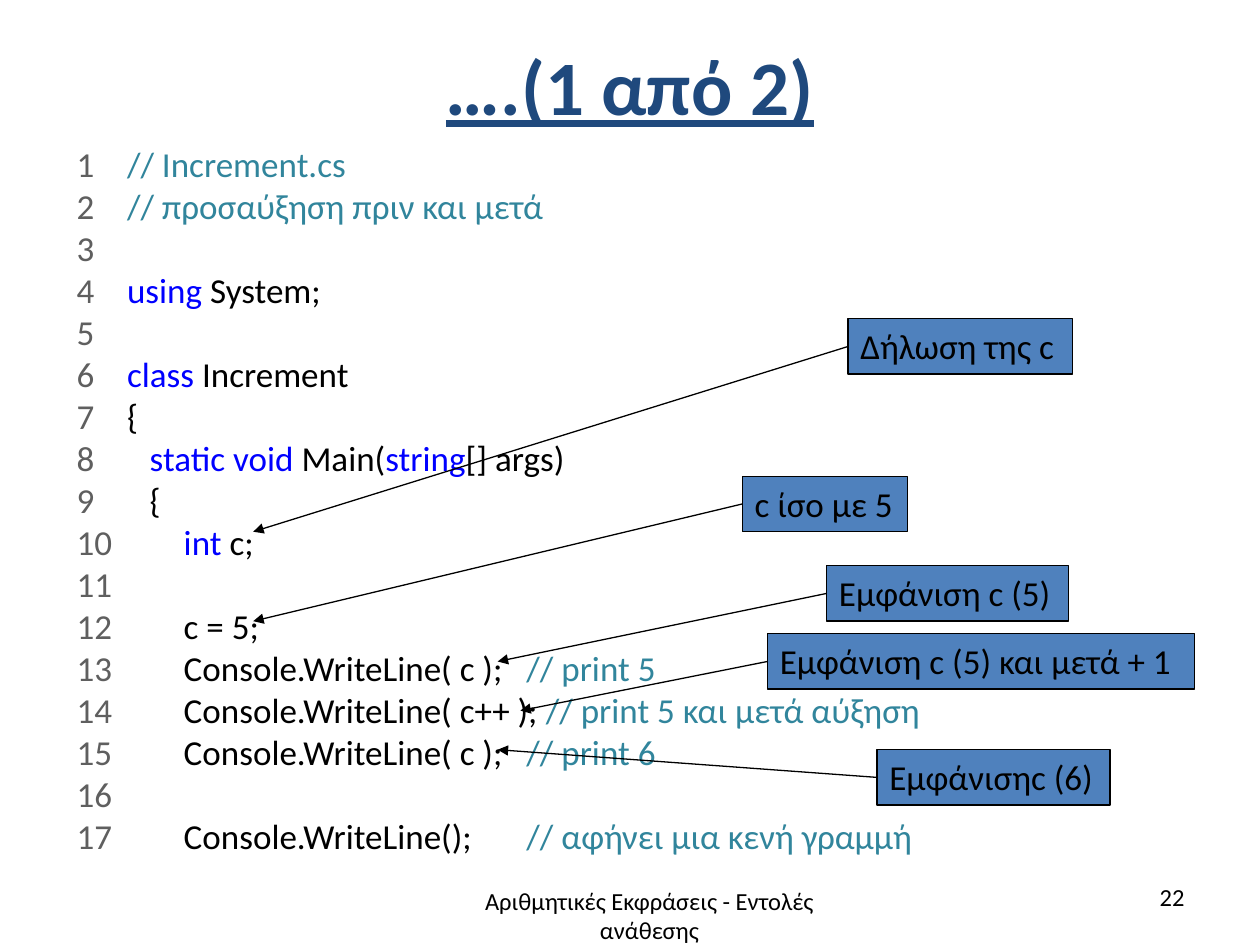
"""Build the slide that annotates the Increment.cs listing."""
from lxml import etree
from pptx import Presentation
from pptx.dml.color import RGBColor
from pptx.enum.shapes import MSO_CONNECTOR, MSO_SHAPE
from pptx.enum.text import MSO_ANCHOR, MSO_AUTO_SIZE, PP_ALIGN
from pptx.oxml.ns import qn
from pptx.util import Inches, Pt

STRAIGHT, RECTANGLE = MSO_CONNECTOR.STRAIGHT, MSO_SHAPE.RECTANGLE
MIDDLE, TOP = MSO_ANCHOR.MIDDLE, MSO_ANCHOR.TOP
LEFT, CENTER, RIGHT = PP_ALIGN.LEFT, PP_ALIGN.CENTER, PP_ALIGN.RIGHT
FIT = MSO_AUTO_SIZE.SHAPE_TO_FIT_TEXT
LEFT_SIDE = 1

FONT = "Calibri"
COLORS = {
    "title": "1F497D", "number": "5F5F5F", "comment": "31859C",
    "keyword": "0000FF", "plain": "000000", "label": "4F81BD",
}
INDENTS = [0.4, 0.58, 0.85]
COMMENT_STOP = 3.57
LABEL_HEIGHT = 0.44

CODE = [
    (0, [("// Increment.cs", "comment")]),
    (0, [("// προσαύξηση πριν και μετά", "comment")]),
    (0, []),
    (0, [("using", "keyword"), (" System;", "plain")]),
    (0, []),
    (0, [("class", "keyword"), (" Increment", "plain")]),
    (0, [("{", "plain")]),
    (1, [("static void", "keyword"), (" Main(", "plain"),
         ("string", "keyword"), ("[] args)", "plain")]),
    (1, [("{", "plain")]),
    (2, [("int", "keyword"), (" c;", "plain")]),
    (2, []),
    (2, [("c = 5;", "plain")]),
    (2, [("Console.WriteLine( c );\t", "plain"), ("// print 5", "comment")]),
    (2, [("Console.WriteLine( c++ ); ", "plain"),
         ("// print 5 και μετά αύξηση", "comment")]),
    (2, [("Console.WriteLine( c );\t", "plain"), ("// print 6", "comment")]),
    (2, []),
    (2, [("Console.WriteLine();\t", "plain"),
         ("// αφήνει μια κενή γραμμή", "comment")]),
]
LABELS = [
    ("Δήλωση της c", 6.73, 2.53, 1.78, (2.01, 4.22)),
    ("c ίσο με 5", 5.89, 3.78, 1.31, (2.01, 4.93)),
    ("Εμφάνιση c (5)", 6.56, 4.49, 1.92, (3.95, 5.25)),
    ("Εμφάνιση c (5) και μετά + 1", 6.09, 5.03, 3.39, (4.13, 5.64)),
    ("Εμφάνισηc (6)", 6.96, 5.95, 1.85, (3.95, 5.95)),
]
CAPTIONS = [
    ("Αριθμητικές Εκφράσεις - Εντολές ανάθεσης", (3.41, 6.98, 3.49, 0.55), CENTER),
    ("22", (7.17, 6.95, 2.33, 0.4), RIGHT),
]


def color(name):
    return RGBColor.from_string(COLORS[name])


def set_font(font, size, name="plain"):
    font.name, font.size = FONT, Pt(size)
    font.color.rgb = color(name)


def add_text(page, text, area, size, align, name="plain", anchor=TOP):
    box = page.shapes.add_textbox(*map(Inches, area))
    box.text_frame.word_wrap = True
    box.text_frame.vertical_anchor = anchor
    para = box.text_frame.paragraphs[0]
    para.text, para.alignment = text, align
    set_font(para.font, size, name)
    return para


def set_tab_stops(para, positions):
    properties = para._p.get_or_add_pPr()
    stops = etree.Element(qn("a:tabLst"))
    for position in positions:
        etree.SubElement(stops, qn("a:tab"), pos=str(Inches(position)), algn="l")
    properties.insert(0, stops)


def add_code(page):
    box = page.shapes.add_textbox(*map(Inches, (0.51, 1.08, 8.99, 5.82)))
    frame = box.text_frame
    frame.word_wrap = True
    for number, (level, spans) in enumerate(CODE, 1):
        para = frame.paragraphs[0] if number == 1 else frame.add_paragraph()
        set_tab_stops(para, [INDENTS[level], COMMENT_STOP])
        lead = (f"{number}\t" if spans else str(number), "number")
        for text, name in [lead, *spans]:
            span = para.add_run()
            span.text = text
            set_font(span.font, 20, name)


def add_label(page, text, left, top, width, target):
    box = page.shapes.add_shape(
        RECTANGLE, *map(Inches, (left, top, width, LABEL_HEIGHT)))
    box.shadow.inherit = False
    box.fill.solid()
    box.fill.fore_color.rgb = color("label")
    box.line.color.rgb, box.line.width = color("plain"), Pt(0.75)
    frame = box.text_frame
    frame.word_wrap, frame.auto_size = False, FIT
    frame.vertical_anchor = TOP
    para = frame.paragraphs[0]
    para.text, para.alignment = text, LEFT
    set_font(para.font, 20)

    start = (left, top + LABEL_HEIGHT / 2)
    arrow = page.shapes.add_connector(STRAIGHT, *map(Inches, start + target))
    arrow.begin_connect(box, LEFT_SIDE)
    arrow.line.color.rgb, arrow.line.width = color("plain"), Pt(0.75)
    etree.SubElement(arrow.line._get_or_add_ln(), qn("a:tailEnd"), type="triangle")
    etree.SubElement(arrow._element.spPr, qn("a:effectLst"))


def main():
    deck = Presentation()
    deck.slide_width, deck.slide_height = Inches(10), Inches(7.5)
    page = deck.slides.add_slide(deck.slide_layouts[6])
    title = add_text(page, "….(1 από 2)", (0.5, 0.05, 9, 1.25), 44, CENTER,
                     "title", MIDDLE)
    title.font.bold = title.font.underline = True
    add_code(page)
    for label in LABELS:
        add_label(page, *label)
    for text, area, align in CAPTIONS:
        add_text(page, text, area, 14, align)
    deck.save("out.pptx")


if __name__ == "__main__":
    main()
